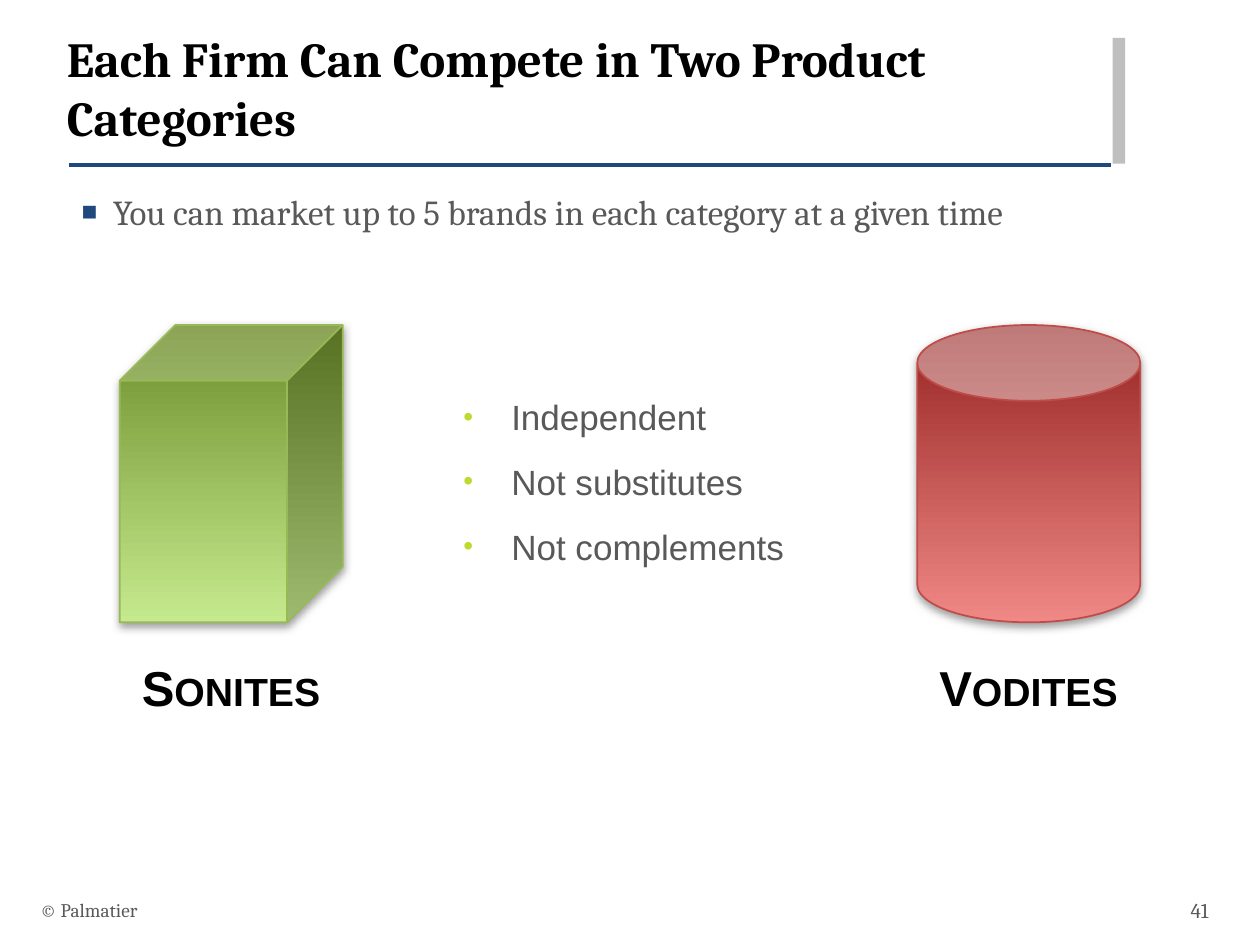
from dataclasses import dataclass

import pptx
import pptx.dml.color
import pptx.enum.shapes
import pptx.enum.text
import pptx.oxml
import pptx.oxml.ns
import pptx.shapes.autoshape
import pptx.slide
import pptx.text.text
import pptx.util

Inches = pptx.util.Inches
Pt = pptx.util.Pt
Align = pptx.enum.text.PP_ALIGN
Anchor = pptx.enum.text.MSO_ANCHOR
Kind = pptx.enum.shapes.MSO_SHAPE

COLORS = {
    "black": "000000", "gray": "595959", "bar": "BFBFBF", "blue": "1F497D",
    "lime": "C1D82F", "shade": "808080",
    "green dark": "6E8E2B", "green light": "C5EA8D", "green line": "98B955",
    "red dark": "942320", "red light": "F08886", "red line": "BF4C48",
}


@dataclass
class Bullet:
    char: str
    color: str
    size: int
    indent: float


@dataclass
class Solid:
    """A product category: a shaded solid with its name below."""
    name: str
    kind: Kind
    left: float
    hue: str
    adjust: float


SOLIDS = [
    Solid("Sonites", Kind.CUBE, 0.95, "green", 0.25),
    Solid("Vodites", Kind.CAN, 7.28, "red", 0.34),
]
SQUARE = Bullet("■", "blue", 75, 0.25)
DOT = Bullet("•", "lime", 80, 0.38)


def rgb(name: str) -> pptx.dml.color.RGBColor:
    return pptx.dml.color.RGBColor.from_string(COLORS[name])


def add_xml(parent, tag: str, inner: str = "", **attrs) -> None:
    pairs = "".join(f' {key}="{val}"' for key, val in attrs.items())
    space = pptx.oxml.ns.nsdecls("a")
    parent.append(pptx.oxml.parse_xml(
        f"<a:{tag} {space}{pairs}>{inner}</a:{tag}>"))


def add_bullet(para: pptx.text.text._Paragraph, bullet: Bullet) -> None:
    props = para._p.get_or_add_pPr()
    props.set("marL", str(Inches(bullet.indent)))
    props.set("indent", str(-Inches(bullet.indent)))
    add_xml(props, "buClr", f'<a:srgbClr val="{COLORS[bullet.color]}"/>')
    add_xml(props, "buSzPct", val=bullet.size * 1000)
    add_xml(props, "buFont", typeface="Arial")
    add_xml(props, "buChar", char=bullet.char)


def write(frame: pptx.text.text.TextFrame, text: str, *, size: int,
          font: str = "Cambria", color: str = "gray", bold: bool = False,
          align: Align = Align.LEFT, anchor: Anchor = Anchor.TOP,
          small: bool = False, bullet: Bullet | None = None,
          gap: int = 0) -> None:
    """Write one paragraph per line, with gap points between them."""
    frame.word_wrap = True
    frame.auto_size = pptx.enum.text.MSO_AUTO_SIZE.NONE
    frame.vertical_anchor = anchor
    for i, line in enumerate(text.split("\n")):
        para = frame.add_paragraph() if i else frame.paragraphs[0]
        para.alignment = align
        para.space_before = Pt(gap if i else 0)
        if bullet:
            add_bullet(para, bullet)
        run = para.add_run()
        run.text = line
        run.font.name, run.font.size, run.font.bold = font, Pt(size), bold
        run.font.color.rgb = rgb(color)
        if small:
            run._r.get_or_add_rPr().set("cap", "small")


def add_text(slide: pptx.slide.Slide, text: str, left: float, top: float,
             width: float, height: float, **style) -> None:
    box = slide.shapes.add_textbox(*map(Inches, (left, top, width, height)))
    write(box.text_frame, text, **style)


def add_shade(shape: pptx.shapes.autoshape.Shape) -> None:
    shape.shadow.inherit = False
    effects = shape._element.spPr.find(pptx.oxml.ns.qn("a:effectLst"))
    add_xml(effects, "outerShdw",
            f'<a:srgbClr val="{COLORS["shade"]}"><a:alpha val="75000"/></a:srgbClr>',
            blurRad=Pt(5), dist=Pt(2), dir=90 * 60000, rotWithShape=0)


def add_solid(slide: pptx.slide.Slide, solid: Solid) -> None:
    shape = slide.shapes.add_shape(
        solid.kind, *map(Inches, (solid.left, 2.58, 1.77, 2.36)))
    shape.adjustments[0] = solid.adjust
    shape.fill.gradient()
    shape.fill.gradient_angle = 270
    for stop, tone in zip(shape.fill.gradient_stops, ("dark", "light")):
        stop.color.rgb = rgb(f"{solid.hue} {tone}")
    shape.line.color.rgb = rgb(f"{solid.hue} line")
    shape.line.width = Pt(1)
    add_shade(shape)
    add_text(slide, solid.name, solid.left - 0.2, 5.17, 2.17, 0.58, size=28,
             font="Arial", color="black", bold=True, align=Align.CENTER,
             small=True)


def add_header(slide: pptx.slide.Slide, text: str) -> None:
    rule = slide.shapes.add_connector(
        pptx.enum.shapes.MSO_CONNECTOR.STRAIGHT,
        *map(Inches, (0.55, 1.31, 8.82, 1.31)))
    rule.line.color.rgb = rgb("blue")
    rule.line.width = Pt(2)
    add_xml(rule._element.spPr, "effectLst")

    bar = slide.shapes.add_shape(
        Kind.RECTANGLE, *map(Inches, (8.83, 0.3, 0.1, 1)))
    bar.fill.solid()
    bar.fill.fore_color.rgb = rgb("bar")
    bar.line.fill.background()
    bar.shadow.inherit = False

    title = slide.shapes.title
    title.left, title.top = Inches(0.43), Inches(0.18)
    title.width, title.height = Inches(7.9), Inches(0.83)
    write(title.text_frame, text, size=28, color="black", bold=True)


def main() -> None:
    deck = pptx.Presentation()
    deck.slide_width, deck.slide_height = Inches(10), Inches(7.5)
    slide = deck.slides.add_slide(deck.slide_layouts.get_by_name("Title Only"))

    add_header(slide, "Each Firm Can Compete in Two Product Categories")
    add_text(slide,
             "You can market up to 5 brands in each category at a given time",
             0.55, 1.46, 9.14, 5.41, size=20, bullet=SQUARE)
    add_text(slide, "Independent\nNot substitutes\nNot complements",
             3.58, 3.17, 2.76, 1.3, size=20, font="Arial",
             anchor=Anchor.MIDDLE, bullet=DOT, gap=13)
    for solid in SOLIDS:
        add_solid(slide, solid)
    add_text(slide, "© Palmatier", 0.22, 7.02, 6.7, 0.4, size=11,
             anchor=Anchor.MIDDLE)
    add_text(slide, "41", 9.08, 7.02, 0.61, 0.4, size=12,
             align=Align.RIGHT, anchor=Anchor.MIDDLE)
    deck.save("out.pptx")


if __name__ == "__main__":
    main()
